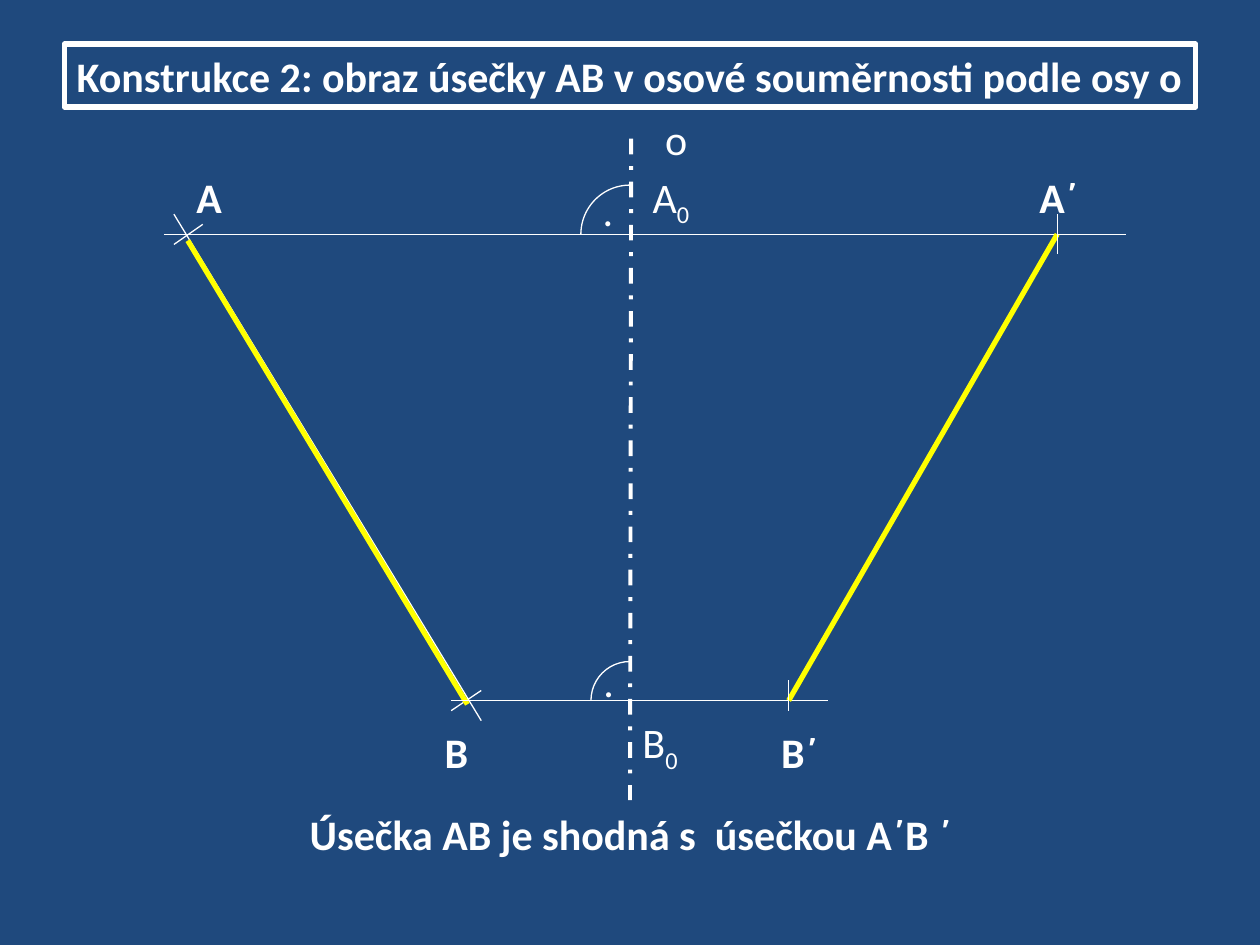
from typing import NamedTuple

from pptx import Presentation
from pptx import util as u
from pptx.dml.color import RGBColor
from pptx.enum import dml, shapes, text
from pptx.oxml import ns
from lxml import etree

NAVY = RGBColor(0x1F, 0x49, 0x7D)
WHITE = RGBColor(0xFF, 0xFF, 0xFF)
YELLOW = RGBColor(0xFF, 0xFF, 0x00)

AXIS_X = 360
TOP_Y = 133.9
BOTTOM_Y = 400.3
IMAGE_A_X = 604.1
IMAGE_B_X = 450.7
LABEL_HEIGHT = 36


class Segment(NamedTuple):
    x1: float
    y1: float
    x2: float
    y2: float
    color: RGBColor = WHITE
    width: float = 0.75
    dash: dml.MSO_LINE | None = None


class RightAngle(NamedTuple):
    y: float
    radius: float
    mark: str


class Label(NamedTuple):
    words: str
    left: float
    top: float
    width: float
    bold: bool = True
    subscript: str = ""


SEGMENTS = [
    Segment(99.4, 122.4, 275, 411.8),
    Segment(99.4, 139.7, 115.9, 128.2),
    Segment(257.8, 406.1, 275, 394.6),
    Segment(107.3, 137.5, 267.1, 402.5, YELLOW, 3),
    Segment(360.7, 79.2, AXIS_X, 457.2, WHITE, 2.25, dml.MSO_LINE.DASH_DOT),
    Segment(93.6, TOP_Y, 643.7, TOP_Y),
    Segment(257.8, BOTTOM_Y, 473, BOTTOM_Y),
    Segment(IMAGE_A_X, TOP_Y, IMAGE_B_X, BOTTOM_Y, YELLOW, 3),
    Segment(IMAGE_A_X, 122.4, IMAGE_A_X, 145.4),
    Segment(IMAGE_B_X, 388.8, IMAGE_B_X, 406.1),
]

RIGHT_ANGLES = [RightAngle(TOP_Y, 28.1, " ."), RightAngle(BOTTOM_Y, 22.3, ".")]

LABELS = [
    Label("A", 105.1, 94.3, 28.1),
    Label("A΄", 586.8, 94.3, 45.4),
    Label("A", 365.8, 94.3, 45.4, False, "0"),
    Label("B", 247, 411.8, 33.8),
    Label("B΄", 439.2, 411.8, 39.6),
    Label("B", 360, 406.1, 51.1, False, "0"),
    Label("o", 373, 61.2, 33.8, False),
    Label("Úsečka AB je shodná s  úsečkou A΄B ΄", 169.9, 458.6, 393.8),
]


def add_run(paragraph, words: str, *, bold: bool = False, baseline: int = 0) -> None:
    run = paragraph.add_run()
    run.text = words
    run.font.name = "Calibri"
    run.font.size = u.Pt(24)
    run.font.bold = bold
    run.font.color.rgb = WHITE
    if baseline:
        run.font._element.set("baseline", str(baseline * 1000))


def write_text(shape, words: str, *, bold: bool = False, subscript: str = "",
               wrap: bool = True, grow: bool = True) -> None:
    frame = shape.text_frame
    frame.word_wrap = wrap
    if grow:
        frame.auto_size = text.MSO_AUTO_SIZE.SHAPE_TO_FIT_TEXT
    paragraph = frame.paragraphs[0]
    paragraph.alignment = text.PP_ALIGN.LEFT
    add_run(paragraph, words, bold=bold)
    if subscript:
        add_run(paragraph, subscript, bold=bold, baseline=-25)


def draw_segment(slide, segment: Segment) -> None:
    connector = slide.shapes.add_connector(
        shapes.MSO_CONNECTOR.STRAIGHT,
        u.Pt(segment.x1), u.Pt(segment.y1), u.Pt(segment.x2), u.Pt(segment.y2))
    connector.line.color.rgb = segment.color
    connector.line.width = u.Pt(segment.width)
    if segment.dash is not None:
        connector.line.dash_style = segment.dash
    etree.SubElement(connector._element.spPr, ns.qn("a:effectLst"))


def add_outline(slide, kind, left: float, top: float, width: float, height: float,
                line_width: float):
    shape = slide.shapes.add_shape(
        kind, u.Pt(left), u.Pt(top), u.Pt(width), u.Pt(height))
    shape.shadow.inherit = False
    shape.fill.background()
    shape.line.color.rgb = WHITE
    shape.line.width = u.Pt(line_width)
    return shape


def draw_right_angle(slide, angle: RightAngle) -> None:
    size = 2 * angle.radius
    arc = add_outline(slide, shapes.MSO_SHAPE.ARC, AXIS_X - angle.radius,
                      angle.y - angle.radius, size, size, 0.75)
    arc.adjustments[0] = 180 * 0.6
    arc.adjustments[1] = 270 * 0.6
    write_text(arc, angle.mark, wrap=False, grow=False)


def draw_label(slide, label: Label) -> None:
    box = slide.shapes.add_textbox(
        u.Pt(label.left), u.Pt(label.top), u.Pt(label.width), u.Pt(LABEL_HEIGHT))
    write_text(box, label.words, bold=label.bold, subscript=label.subscript)


def main() -> None:
    presentation = Presentation()
    presentation.slide_width = u.Pt(720)
    presentation.slide_height = u.Pt(540)
    slide = presentation.slides.add_slide(presentation.slide_layouts[6])
    slide.background.fill.solid()
    slide.background.fill.fore_color.rgb = NAVY

    for segment in SEGMENTS:
        draw_segment(slide, segment)
    for angle in RIGHT_ANGLES:
        draw_right_angle(slide, angle)
    for label in LABELS:
        draw_label(slide, label)

    title = add_outline(slide, shapes.MSO_SHAPE.RECTANGLE,
                        36.7, 25.2, 646.6, LABEL_HEIGHT, 3)
    write_text(title, "Konstrukce 2: obraz úsečky AB v osové souměrnosti podle osy o",
               bold=True, wrap=False)
    presentation.save("out.pptx")


if __name__ == "__main__":
    main()
